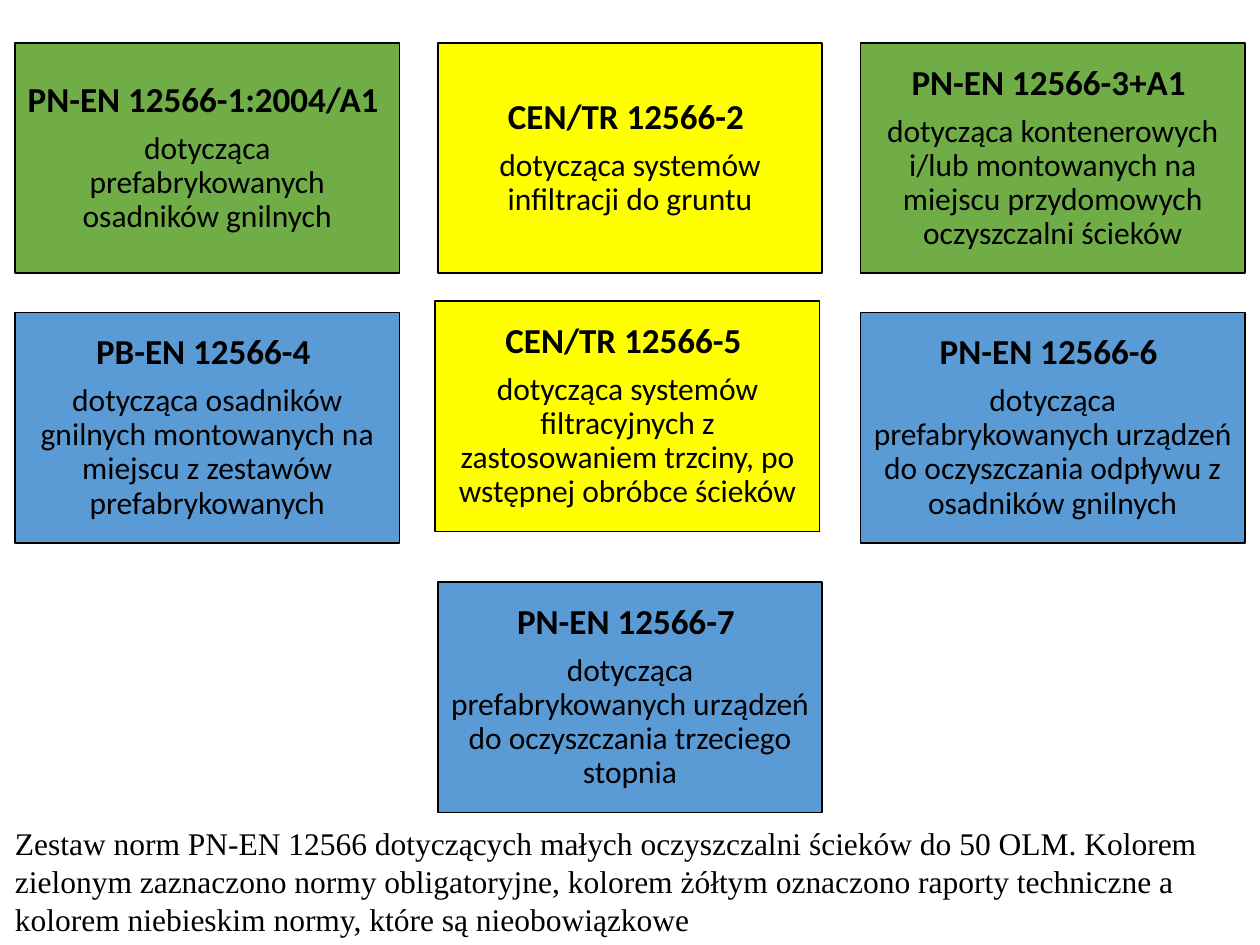
from pptx import Presentation
from pptx.util import Inches, Pt
from pptx.dml.color import RGBColor
from pptx.enum.shapes import MSO_SHAPE as Shape
from pptx.enum.text import MSO_ANCHOR as Anchor, PP_ALIGN as Align, MSO_AUTO_SIZE as Fit

# Content: column, row, kind, norm, scope
GREEN, YELLOW, BLUE, BLACK = "70AD47", "FFFF00", "5B9BD5", "000000"
NORMS = [
    (0, 0, GREEN, "PN-EN 12566-1:2004/A1 ",
     "dotycząca prefabrykowanych osadników gnilnych"),
    (1, 0, YELLOW, "CEN/TR 12566-2 ",
     "dotycząca systemów infiltracji do gruntu"),
    (2, 0, GREEN, "PN-EN 12566-3+A1 ",
     "dotycząca kontenerowych i/lub montowanych na miejscu "
     "przydomowych oczyszczalni ścieków"),
    (0, 1, BLUE, "PB-EN 12566-4 ",
     "dotycząca osadników gnilnych montowanych na miejscu "
     "z zestawów prefabrykowanych"),
    (1, 1, YELLOW, "CEN/TR 12566-5 ",
     "dotycząca systemów filtracyjnych z zastosowaniem trzciny, "
     "po wstępnej obróbce ścieków"),
    (2, 1, BLUE, "PN-EN 12566-6 ",
     "dotycząca prefabrykowanych urządzeń do oczyszczania odpływu "
     "z osadników gnilnych"),
    (1, 2, BLUE, "PN-EN 12566-7 ",
     "dotycząca prefabrykowanych urządzeń do oczyszczania trzeciego stopnia"),
]
NOTE = ("Zestaw norm PN-EN 12566 dotyczących małych oczyszczalni ścieków do 50 OLM. "
        "Kolorem zielonym zaznaczono normy obligatoryjne, kolorem żółtym oznaczono "
        "raporty techniczne a kolorem niebieskim normy, które są nieobowiązkowe")

# Grid in inches; one box sits slightly off it
LEFT, TOP, WIDTH, HEIGHT = 0.12, 0.34, 3.05, 1.83
STEP_X, STEP_Y = 3.355, 2.14
SHIFT = {(1, 1): (-0.02, -0.09)}


def paint(color, code):
    color.rgb = RGBColor.from_string(code)


def add_run(para, text, size, font, bold=False):
    run = para.add_run()
    run.text = text
    run.font.size, run.font.name, run.font.bold = Pt(size), font, bold
    run.font.fill.solid()
    paint(run.font.fill.fore_color, BLACK)


def add_norm(slide, col, row, fill, name, scope):
    dx, dy = SHIFT.get((col, row), (0, 0))
    box = slide.shapes.add_shape(
        Shape.RECTANGLE, Inches(LEFT + col * STEP_X + dx),
        Inches(TOP + row * STEP_Y + dy), Inches(WIDTH), Inches(HEIGHT))
    box.shadow.inherit = False
    box.fill.solid()
    paint(box.fill.fore_color, fill)
    box.line.width = Pt(1)
    paint(box.line.color, BLACK)
    frame = box.text_frame
    frame.word_wrap = True
    frame.vertical_anchor = Anchor.MIDDLE
    frame.margin_left = frame.margin_right = Inches(0.08)
    frame.margin_top = frame.margin_bottom = Inches(0.08)
    head, body = frame.paragraphs[0], frame.add_paragraph()
    for para, text, size in ((head, name, 20), (body, scope, 18)):
        para.alignment = Align.CENTER
        para.line_spacing = 0.9
        para.space_after = Pt(size * 0.35)
        add_run(para, text, size, "Calibri", para is head)


deck = Presentation()
deck.slide_width, deck.slide_height = Inches(10), Inches(7.5)
slide = deck.slides.add_slide(deck.slide_layouts[6])

# Boxes
for norm in NORMS:
    add_norm(slide, *norm)

# Colour key below the boxes
note = slide.shapes.add_textbox(Inches(0.02), Inches(6.49), Inches(9.92), Inches(1.01))
note.text_frame.word_wrap = True
note.text_frame.auto_size = Fit.SHAPE_TO_FIT_TEXT
add_run(note.text_frame.paragraphs[0], NOTE, 18, "Times New Roman")

deck.save("out.pptx")
